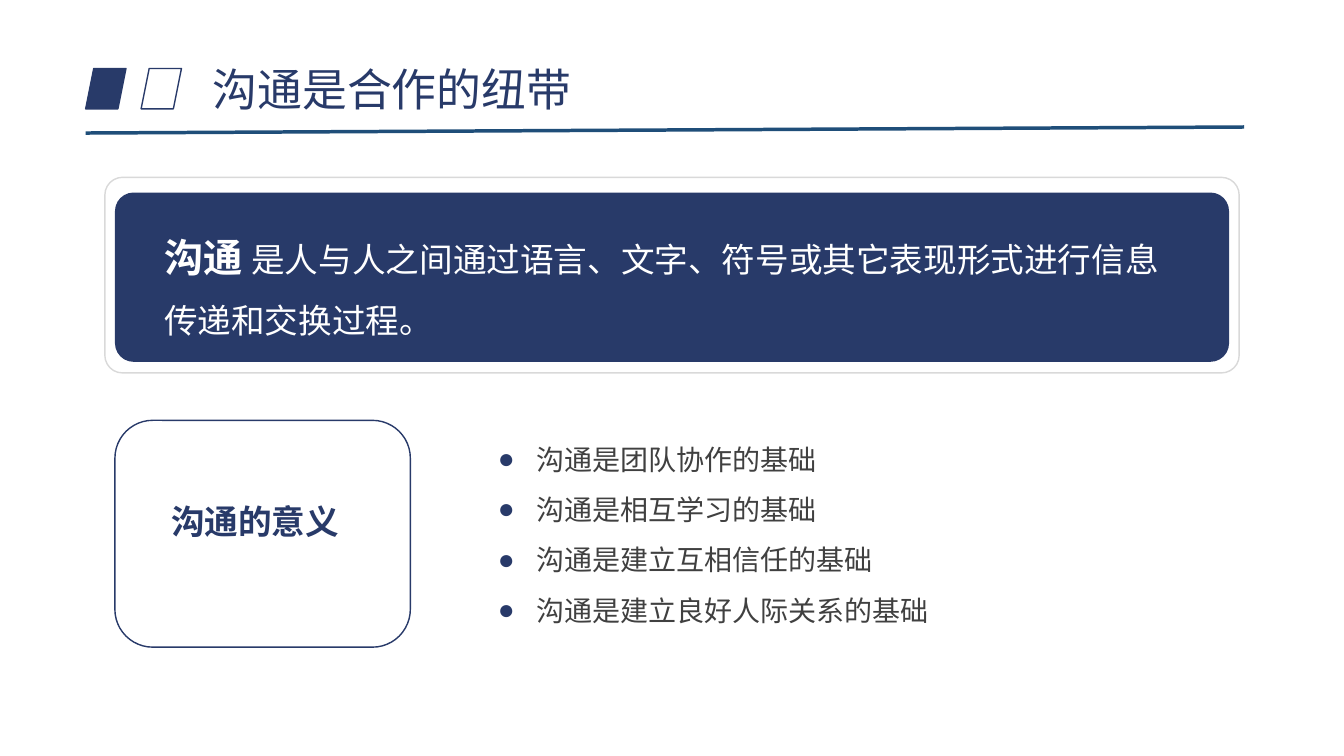
from pptx import Presentation
from pptx.dml.color import RGBColor
from pptx.enum.shapes import MSO_CONNECTOR, MSO_SHAPE
from pptx.enum.text import MSO_ANCHOR, PP_ALIGN
from pptx.oxml.ns import qn
from pptx.util import Inches, Pt
from lxml.etree import SubElement

NAVY = "283A69"
WHITE = "FFFFFF"
CHARCOAL = "404040"
SILVER = "D9D9D9"
RULE_BLUE = "1F4E79"


def color(value):
    return RGBColor.from_string(value)


class SlideBuilder:
    font_name = "Arial"

    def __init__(self, slide):
        self.slide = slide

    def shape(self, kind, left, top, width, height, fill=None, line=None, corner=None):
        box = self.slide.shapes.add_shape(
            kind, Inches(left), Inches(top), Inches(width), Inches(height))
        box.shadow.inherit = False
        if corner is not None:
            box.adjustments[0] = corner
        if fill:
            box.fill.solid()
            box.fill.fore_color.rgb = color(fill)
        else:
            box.fill.background()
        if line:
            box.line.color.rgb = color(line)
            box.line.width = Pt(1)
        else:
            box.line.fill.background()
        return box

    def rule(self, start, end, line, width):
        connector = self.slide.shapes.add_connector(
            MSO_CONNECTOR.STRAIGHT, *map(Inches, start + end))
        connector.line.color.rgb = color(line)
        connector.line.width = Pt(width)
        SubElement(connector._element.spPr, qn("a:effectLst"))
        return connector

    def text(self, left, top, width, height, paragraphs, ink, spacing=None,
             align=PP_ALIGN.LEFT, anchor=MSO_ANCHOR.TOP, wrap=True):
        box = self.slide.shapes.add_textbox(
            Inches(left), Inches(top), Inches(width), Inches(height))
        frame = box.text_frame
        frame.word_wrap = wrap
        frame.vertical_anchor = anchor
        for index, spans in enumerate(paragraphs):
            para = frame.add_paragraph() if index else frame.paragraphs[0]
            para.alignment = align
            para.line_spacing = spacing
            for words, size, bold in spans:
                span = para.add_run()
                span.text = words
                span.font.name = self.font_name
                span.font.size = Pt(size)
                span.font.bold = bold
                span.font.color.rgb = color(ink)
        return box

    def bullets(self, left, top, width, height, items, size, ink, bullet_color):
        paragraphs = [[(item, size, False)] for item in items]
        box = self.text(left, top, width, height, paragraphs, ink, spacing=1.5)
        for para in box.text_frame.paragraphs:
            properties = para._p.get_or_add_pPr()
            properties.set("marL", str(Inches(0.38)))
            properties.set("indent", str(Inches(-0.38)))
            bullet_fill = SubElement(properties, qn("a:buClr"))
            SubElement(bullet_fill, qn("a:srgbClr")).set("val", bullet_color)
            SubElement(properties, qn("a:buFont")).set("typeface", self.font_name)
            SubElement(properties, qn("a:buChar")).set("char", "●")
        return box


def main():
    deck = Presentation()
    deck.slide_width = Inches(13.33)
    deck.slide_height = Inches(7.5)
    page = SlideBuilder(deck.slides.add_slide(deck.slide_layouts[6]))

    page.bullets(4.84, 4.17, 6.23, 2.12, [
        "沟通是团队协作的基础",
        "沟通是相互学习的基础",
        "沟通是建立互相信任的基础",
        "沟通是建立良好人际关系的基础",
    ], 20, CHARCOAL, NAVY)

    rounded = MSO_SHAPE.ROUNDED_RECTANGLE
    page.shape(rounded, 1.04, 1.76, 11.25, 1.94, line=SILVER, corner=0.09)
    page.shape(rounded, 1.14, 1.91, 11.05, 1.68, fill=NAVY, corner=0.11)
    definition = [
        ("沟通 ", 28, True),
        ("是人与人之间通过语言、文字、符号或其它表现形式进行信息传递和交换过程。", 24, False),
    ]
    page.text(1.53, 2.06, 10.27, 1.34, [definition], WHITE,
              spacing=1.5, anchor=MSO_ANCHOR.MIDDLE)

    page.shape(rounded, 1.14, 4.17, 2.93, 2.25, line=NAVY)
    page.text(1.49, 4.92, 2.08, 0.5, [[("沟通的意义", 24, True)]], NAVY,
              align=PP_ALIGN.CENTER, wrap=False)

    page.text(2.01, 0.56, 4.85, 0.64, [[("沟通是合作的纽带", 32, False)]], NAVY)
    page.rule((0.85, 1.32), (12.34, 1.26), RULE_BLUE, 2.5)
    for left, fill in ((0.85, NAVY), (1.4, None)):
        page.shape(MSO_SHAPE.FLOWCHART_DATA, left, 0.68, 0.4, 0.4, fill=fill, line=NAVY)

    deck.save("out.pptx")


if __name__ == "__main__":
    main()
